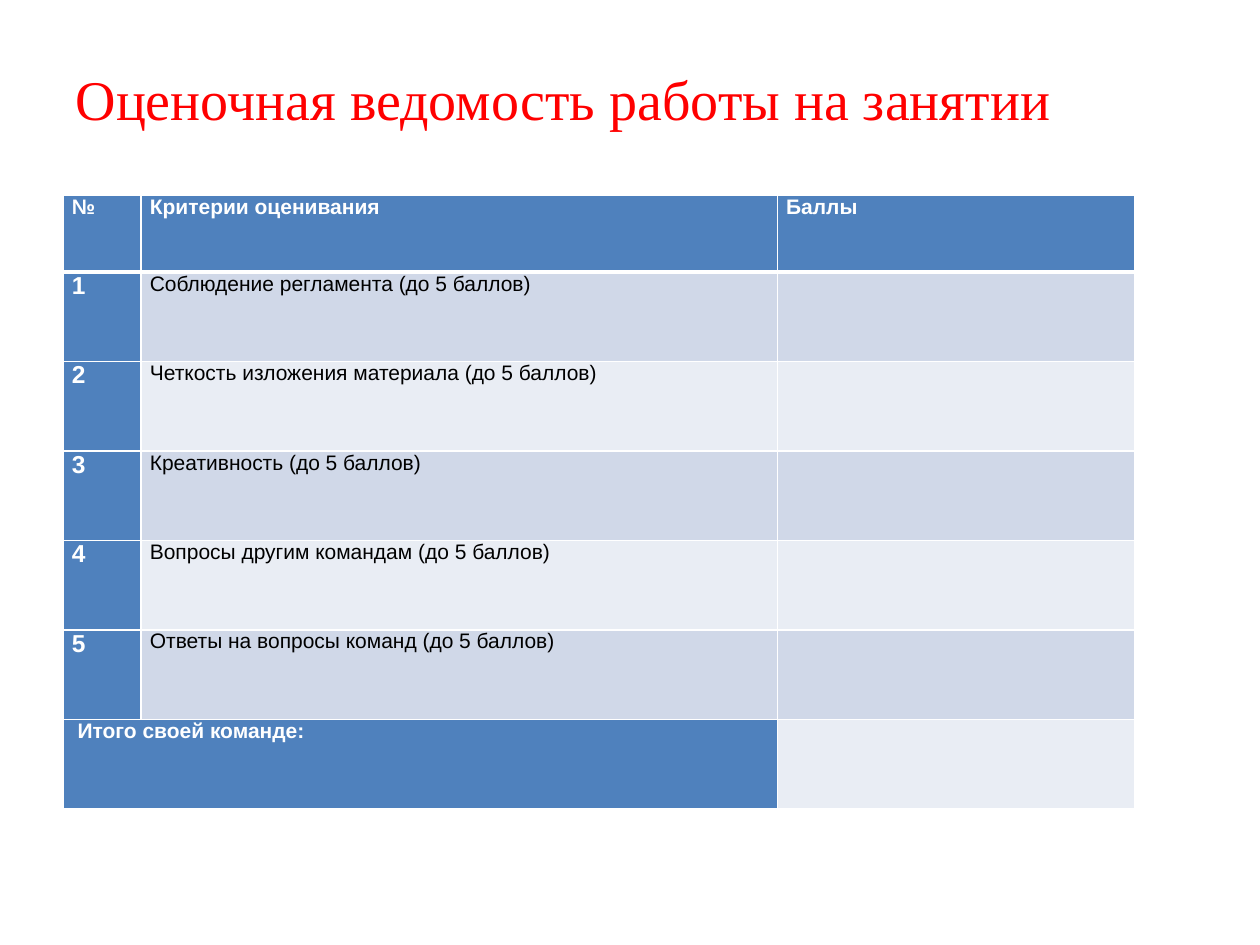
from lxml.etree import SubElement
from pptx import Presentation
from pptx.dml.color import RGBColor
from pptx.enum.text import MSO_ANCHOR, MSO_AUTO_SIZE, PP_ALIGN
from pptx.oxml.ns import qn
from pptx.util import Pt

PX = 9144  # 100 px to the inch

RED = RGBColor(0xFF, 0x00, 0x00)
WHITE = RGBColor(0xFF, 0xFF, 0xFF)
BLACK = RGBColor(0x00, 0x00, 0x00)
BLUE = RGBColor(0x4F, 0x81, 0xBD)
BANDS = (RGBColor(0xD0, 0xD8, 0xE8), RGBColor(0xE9, 0xED, 0xF4))

COLUMN_WIDTHS = (62, 505, 284)
HEADER_HEIGHT, ROW_HEIGHT = 61, 71
HEADER = ("№", "Критерии оценивания ", "Баллы")
CRITERIA = (
    "Соблюдение регламента (до 5 баллов)",
    "Четкость изложения материала (до 5 баллов)",
    "Креативность (до 5 баллов)",
    "Вопросы другим командам (до 5 баллов)",
    "Ответы на вопросы команд (до 5 баллов)",
)
TOTAL = " Итого своей команде:"


def px(n):
    return n * PX


def set_font(p, name, size, color, bold=False):
    f = p.font
    f.name, f.size, f.bold = name, Pt(size), bold
    f.color.rgb = color


def add_title(s, text):
    sp = s.shapes.title
    sp.left, sp.top, sp.width, sp.height = map(px, (50, 45, 813, 94))
    tf = sp.text_frame
    tf.word_wrap = True
    tf.auto_size = MSO_AUTO_SIZE.NONE
    tf.vertical_anchor = MSO_ANCHOR.MIDDLE
    tf.margin_bottom = px(34)  # lifts the line above the middle
    p = tf.paragraphs[0]
    p.text = text
    p.alignment = PP_ALIGN.LEFT
    set_font(p, "Times New Roman", 32, RED)


def set_borders(cell, top=1, bottom=1):
    tc_pr = cell._tc.get_or_add_tcPr()
    for side, width in (("L", 1), ("R", 1), ("T", top), ("B", bottom)):
        ln = SubElement(tc_pr, qn(f"a:ln{side}"), w=str(Pt(width)))
        fill = SubElement(ln, qn("a:solidFill"))
        SubElement(fill, qn("a:srgbClr"), val=str(WHITE))


def format_cell(cell, text, row, col, is_label):
    set_borders(cell, top=3 if row == 1 else 1, bottom=3 if row == 0 else 1)
    cell.fill.solid()
    cell.fill.fore_color.rgb = BLUE if is_label else BANDS[(row - 1) % 2]
    cell.margin_left = cell.margin_right = px(7)
    cell.margin_top = cell.margin_bottom = 0
    if text:
        p = cell.text_frame.paragraphs[0]
        p.text = text
        p.alignment = PP_ALIGN.JUSTIFY
        size = 14 if text.isdigit() else 12
        set_font(p, "Arial", size, WHITE if is_label else BLACK, is_label)


def add_score_table(s):
    numbered = [(str(n), text, "") for n, text in enumerate(CRITERIA, 1)]
    rows = [HEADER, *numbered, (TOTAL, "", "")]
    last = len(rows) - 1
    height = HEADER_HEIGHT + ROW_HEIGHT * last
    table = s.shapes.add_table(
        len(rows), len(COLUMN_WIDTHS),
        px(50), px(155), px(sum(COLUMN_WIDTHS)), px(height)).table
    for column, width in zip(table.columns, COLUMN_WIDTHS):
        column.width = px(width)
    for i, row in enumerate(table.rows):
        row.height = px(ROW_HEIGHT if i else HEADER_HEIGHT)

    # Header row and first column are blue, the rest is banded
    for i, texts in enumerate(rows):
        for j, text in enumerate(texts):
            is_label = i == 0 or j == 0 or (i == last and j == 1)
            format_cell(table.cell(i, j), text, i, j, is_label)
    table.cell(last, 0).merge(table.cell(last, 1))


def main():
    prs = Presentation()
    prs.slide_width, prs.slide_height = px(1000), px(750)
    s = prs.slides.add_slide(prs.slide_layouts[5])
    add_title(s, "Оценочная ведомость работы на занятии")
    add_score_table(s)
    prs.save("out.pptx")


if __name__ == "__main__":
    main()
